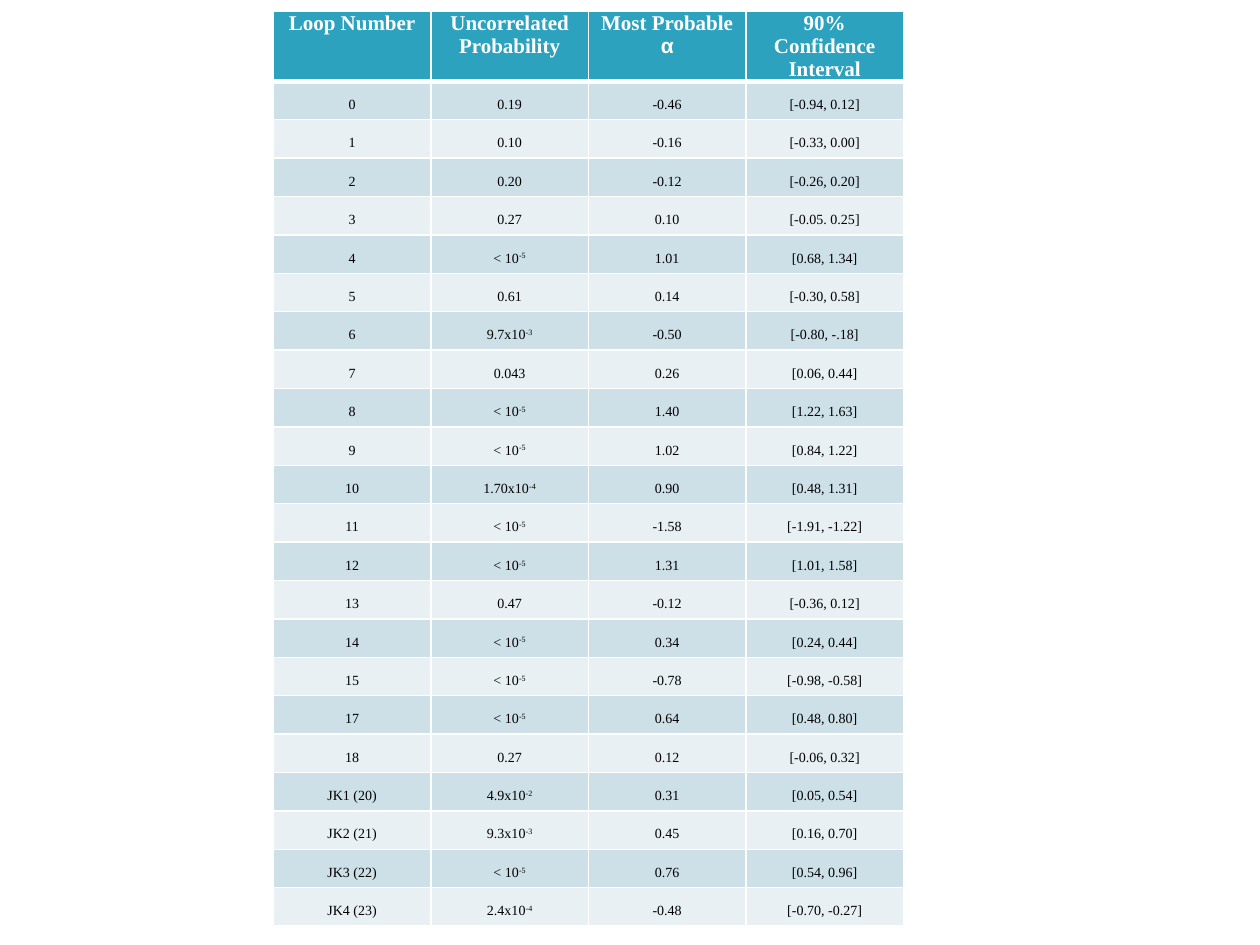
from lxml import etree
from pptx import Presentation
from pptx.dml.color import RGBColor
from pptx.enum.text import PP_ALIGN
from pptx.oxml.ns import qn
from pptx.util import Inches, Pt

CENTER = PP_ALIGN.CENTER
WHITE = RGBColor(0xFF, 0xFF, 0xFF)
BLACK = RGBColor(0x00, 0x00, 0x00)
TEAL = RGBColor(0x2D, 0xA2, 0xBF)
BAND_DARK = RGBColor(0xCD, 0xE0, 0xE8)
BAND_LIGHT = RGBColor(0xE8, 0xF0, 0xF4)

FONT = "Times New Roman"
SYMBOL_FONT = "Arial"
SYMBOL = "α"
HEADER_HEIGHT = Inches(0.36)
BODY_HEIGHT = Inches(6.71)

HEADERS = [
    "Loop Number",
    "Uncorrelated Probability",
    "Most Probable " + SYMBOL,
    "90% Confidence Interval",
]
# A caret marks the start of an exponent
LOOPS = [
    ("0", "0.19", "-0.46", "[-0.94, 0.12]"),
    ("1", "0.10", "-0.16", "[-0.33, 0.00]"),
    ("2", "0.20", "-0.12", "[-0.26, 0.20]"),
    ("3", "0.27", "0.10", "[-0.05. 0.25]"),
    ("4", "< 10^-5", "1.01", "[0.68, 1.34]"),
    ("5", "0.61", "0.14", "[-0.30, 0.58]"),
    ("6", "9.7x10^-3", "-0.50", "[-0.80, -.18]"),
    ("7", "0.043", "0.26", "[0.06, 0.44]"),
    ("8", "< 10^-5", "1.40", "[1.22, 1.63]"),
    ("9", "< 10^-5", "1.02", "[0.84, 1.22]"),
    ("10", "1.70x10^-4", "0.90", "[0.48, 1.31]"),
    ("11", "< 10^-5", "-1.58", "[-1.91, -1.22]"),
    ("12", "< 10^-5", "1.31", "[1.01, 1.58]"),
    ("13", "0.47", "-0.12", "[-0.36, 0.12]"),
    ("14", "< 10^-5", "0.34", "[0.24, 0.44]"),
    ("15", "< 10^-5", "-0.78", "[-0.98, -0.58]"),
    ("17", "< 10^-5", "0.64", "[0.48, 0.80]"),
    ("18", "0.27", "0.12", "[-0.06, 0.32]"),
    ("JK1 (20)", "4.9x10^-2", "0.31", "[0.05, 0.54]"),
    ("JK2 (21)", "9.3x10^-3", "0.45", "[0.16, 0.70]"),
    ("JK3 (22)", "< 10^-5", "0.76", "[0.54, 0.96]"),
    ("JK4 (23)", "2.4x10^-4", "-0.48", "[-0.70, -0.27]"),
]


def set_borders(cell, top, bottom):
    """Draw white cell borders; top and bottom widths are in points."""
    properties = cell._tc.get_or_add_tcPr()
    for side, width in (("L", 1), ("R", 1), ("T", top), ("B", bottom)):
        line = etree.SubElement(properties, qn(f"a:ln{side}"), w=str(Pt(width)))
        fill = etree.SubElement(line, qn("a:solidFill"))
        etree.SubElement(fill, qn("a:srgbClr"), val=str(WHITE))


def format_cell(cell, fill_color, size, color, bold):
    """Apply fill, margins and font, and return the cell's paragraph."""
    cell.fill.solid()
    cell.fill.fore_color.rgb = fill_color
    cell.margin_left = cell.margin_right = Inches(0.07)
    cell.margin_top = cell.margin_bottom = 0
    paragraph = cell.text_frame.paragraphs[0]
    paragraph.alignment = CENTER
    paragraph.font.name = FONT
    paragraph.font.size = Pt(size)
    paragraph.font.bold = bold
    paragraph.font.color.rgb = color
    return paragraph


def add_run(paragraph, text):
    run = paragraph.add_run()
    run.text = text
    return run


def fill_header_cell(cell, text):
    set_borders(cell, top=1, bottom=3)
    paragraph = format_cell(cell, TEAL, 12, WHITE, True)
    label, symbol, _ = text.partition(SYMBOL)
    add_run(paragraph, label)
    if symbol:
        add_run(paragraph, symbol).font.name = SYMBOL_FONT


def fill_body_cell(cell, text, row):
    set_borders(cell, top=3 if row == 1 else 1, bottom=1)
    band = BAND_DARK if row % 2 else BAND_LIGHT
    paragraph = format_cell(cell, band, 8, BLACK, False)
    paragraph.line_spacing = 2.0
    base, _, exponent = text.partition("^")
    add_run(paragraph, base)
    if exponent:
        run = add_run(paragraph, exponent)
        run.font._element.set("baseline", "30000")


def add_loop_table(slide):
    frame = slide.shapes.add_table(
        len(LOOPS) + 1, len(HEADERS), Inches(2.17), Inches(0.09),
        Inches(5), HEADER_HEIGHT + BODY_HEIGHT)
    table = frame.table

    # Header row
    table.rows[0].height = HEADER_HEIGHT
    for column, text in enumerate(HEADERS):
        fill_header_cell(table.cell(0, column), text)

    # One row for each loop
    for row, values in enumerate(LOOPS, start=1):
        table.rows[row].height = BODY_HEIGHT // len(LOOPS)
        for column, text in enumerate(values):
            fill_body_cell(table.cell(row, column), text, row)


def main():
    presentation = Presentation()
    presentation.slide_width = Inches(10)
    presentation.slide_height = Inches(7.5)
    slide = presentation.slides.add_slide(presentation.slide_layouts[6])
    add_loop_table(slide)
    presentation.save("out.pptx")


if __name__ == "__main__":
    main()
